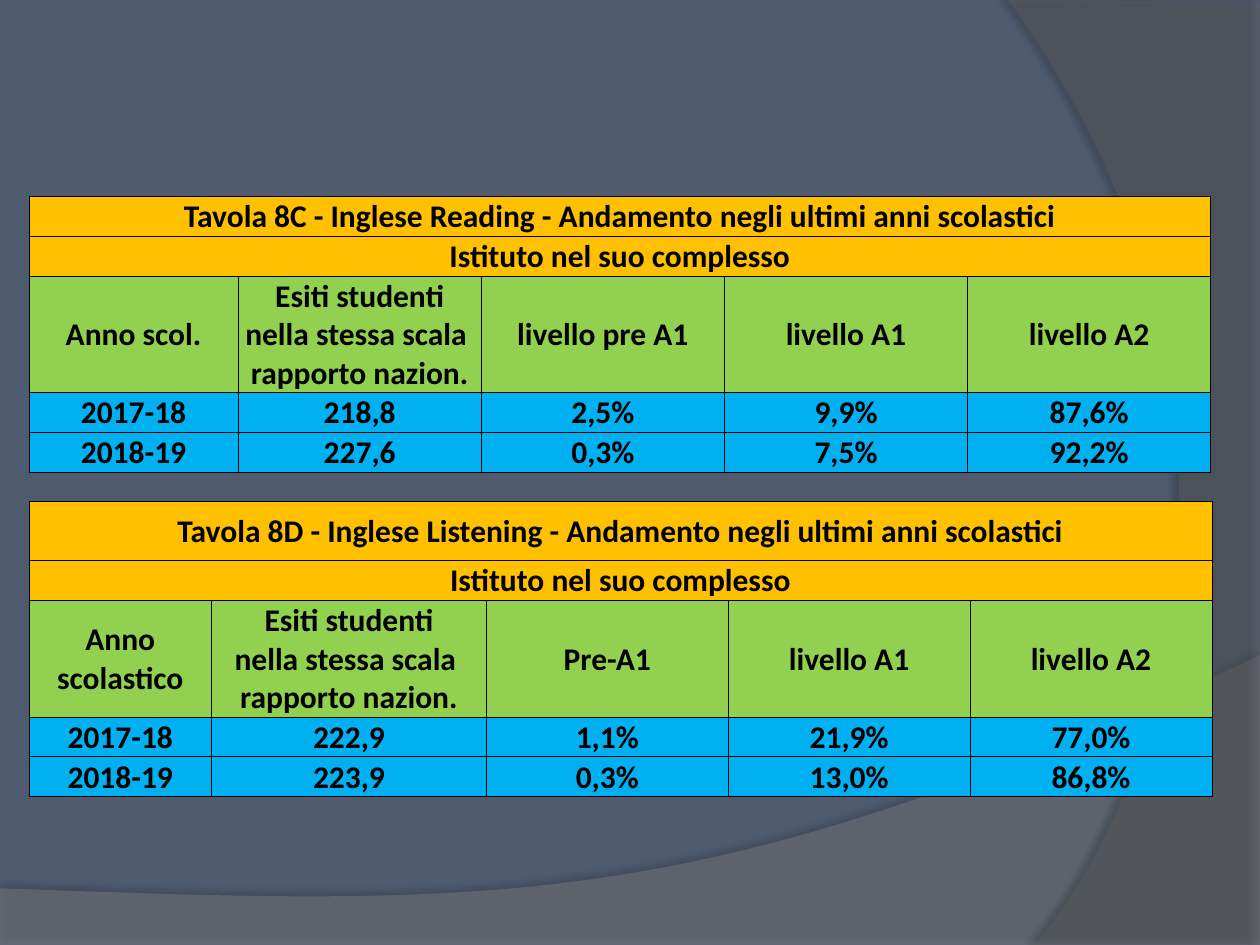
"""Build a slide with two tables of English test results by school year."""
from lxml import etree
from pptx import Presentation
from pptx.dml.color import RGBColor as RGB
from pptx.enum.text import MSO_ANCHOR as ANCHOR, PP_ALIGN as ALIGN
from pptx.oxml import parse_xml
from pptx.oxml.ns import nsdecls, qn
from pptx.util import Inches, Pt

COLOURS = {
    "background": "4E5B6F",
    "wave": "7F7F7F",
    "arc": "5E5E5E",
    "title": "FFC000",
    "header": "92D050",
    "data": "00B0F0",
    "ink": "000000",
}


def write_cell(cell, text, fill, size=18, bold=True, font="Calibri"):
    cell.margin_left = cell.margin_right = cell.margin_top = Inches(0.01)
    cell.margin_bottom = 0
    cell.vertical_anchor = ANCHOR.MIDDLE
    cell.fill.solid()
    cell.fill.fore_color.rgb = RGB.from_string(COLOURS[fill])
    paragraph = cell.text_frame.paragraphs[0]
    paragraph.text = text
    paragraph.alignment = ALIGN.CENTER
    for run in paragraph.runs:
        run.font.name = font
        run.font.size = Pt(size)
        run.font.bold = bold
        run.font.color.rgb = RGB.from_string(COLOURS["ink"])


def curve_points(p0, p1, p2, p3, steps=40):
    for step in range(1, steps + 1):
        t = step / steps
        weights = ((1 - t) ** 3, 3 * t * (1 - t) ** 2, 3 * t * t * (1 - t), t ** 3)
        yield tuple(
            Inches(sum(w * p[axis] for w, p in zip(weights, (p0, p1, p2, p3))))
            for axis in (0, 1)
        )


deck = Presentation()
deck.slide_width, deck.slide_height = Inches(10), Inches(7.5)
slide = deck.slides.add_slide(deck.slide_layouts[6])
slide.background.fill.solid()
slide.background.fill.fore_color.rgb = RGB.from_string(COLOURS["background"])

backdrop = [
    ("wave", 45, [(0, 7.05), (0, 7.51), (10, 7.51), (10, 5.2)],
     [(5.59, 7.29), (3.91, 7.19), (0, 7.05)], (35, 3.5, 270)),
    ("arc", 40, [(10, 0.02), (10, 7.5), (8.21, 7.5)],
     [(9.35, 6.19), (10.18, 3), (8, 0)], (45, 4, 180)),
]
for colour, opacity, corners, curve, (shade, distance, angle) in backdrop:
    start, *others = [(Inches(x), Inches(y)) for x, y in corners]
    outline = slide.shapes.build_freeform(*start)
    outline.add_line_segments(others + list(curve_points(corners[-1], *curve)))
    swoosh = outline.convert_to_shape()
    swoosh.line.fill.background()
    swoosh.fill.solid()
    swoosh.fill.fore_color.rgb = RGB.from_string(COLOURS[colour])
    tint = swoosh.fill._xPr.find(qn("a:solidFill"))[0]
    etree.SubElement(tint, qn("a:alpha"), val=str(opacity * 1000))
    swoosh.element.spPr.append(parse_xml(
        f'<a:effectLst {nsdecls("a")}><a:outerShdw blurRad="{Pt(4)}" dist="{Pt(distance)}"'
        f' dir="{angle * 60000}" algn="ctr" rotWithShape="0"><a:srgbClr val="{COLOURS["ink"]}">'
        f'<a:alpha val="{shade * 1000}"/></a:srgbClr></a:outerShdw></a:effectLst>'
    ))

subtitle = "Istituto nel suo complesso"
scores = "Esiti studenti\nnella stessa scala \nrapporto nazion."
results = [
    (1.56, 0.31, [1.66] + [1.93] * 4, [
        ["Tavola 8C - Inglese Reading - Andamento negli ultimi anni scolastici"],
        [subtitle],
        ["Anno scol.", scores, "livello pre A1", "livello A1", "livello A2"],
        ["2017-18", "218,8", "2,5%", "9,9%", "87,6%"],
        ["2018-19", "227,6", "0,3%", "7,5%", "92,2%"],
    ]),
    (3.98, 0.47, [1.45, 2.18] + [1.92] * 3, [
        ["Tavola 8D - Inglese Listening - Andamento negli ultimi anni scolastici"],
        [subtitle],
        ["Anno scolastico", scores, "Pre-A1", "livello A1", "livello A2"],
        ["2017-18", "222,9", "1,1%", "21,9%", "77,0%"],
        ["2018-19", "223,9", "0,3%", "13,0%", "86,8%"],
    ]),
]
row_fills = ["title", "title", "header", "data", "data"]

for top, title_height, widths, rows in results:
    heights = [title_height, 0.31, 0.92, 0.31, 0.31]
    table = slide.shapes.add_table(
        len(rows), len(widths), Inches(0.23), Inches(top),
        Inches(sum(widths)), Inches(sum(heights)),
    ).table
    table.first_row = table.horz_banding = False
    for column, width in zip(table.columns, widths):
        column.width = Inches(width)
    for r, (height, fill, texts) in enumerate(zip(heights, row_fills, rows)):
        table.rows[r].height = Inches(height)
        if len(texts) == 1:
            table.cell(r, 0).merge(table.cell(r, len(widths) - 1))
        for c in range(len(widths)):
            cell = table.cell(r, c)
            write_cell(cell, texts[c] if c < len(texts) else "", fill)
            properties = cell._tc.get_or_add_tcPr()
            for position, side in enumerate("LRTB"):
                properties.insert(position, parse_xml(
                    f'<a:ln{side} {nsdecls("a")} w="{Pt(0.5)}"><a:solidFill>'
                    f'<a:srgbClr val="{COLOURS["ink"]}"/></a:solidFill></a:ln{side}>'
                ))

deck.save("out.pptx")
